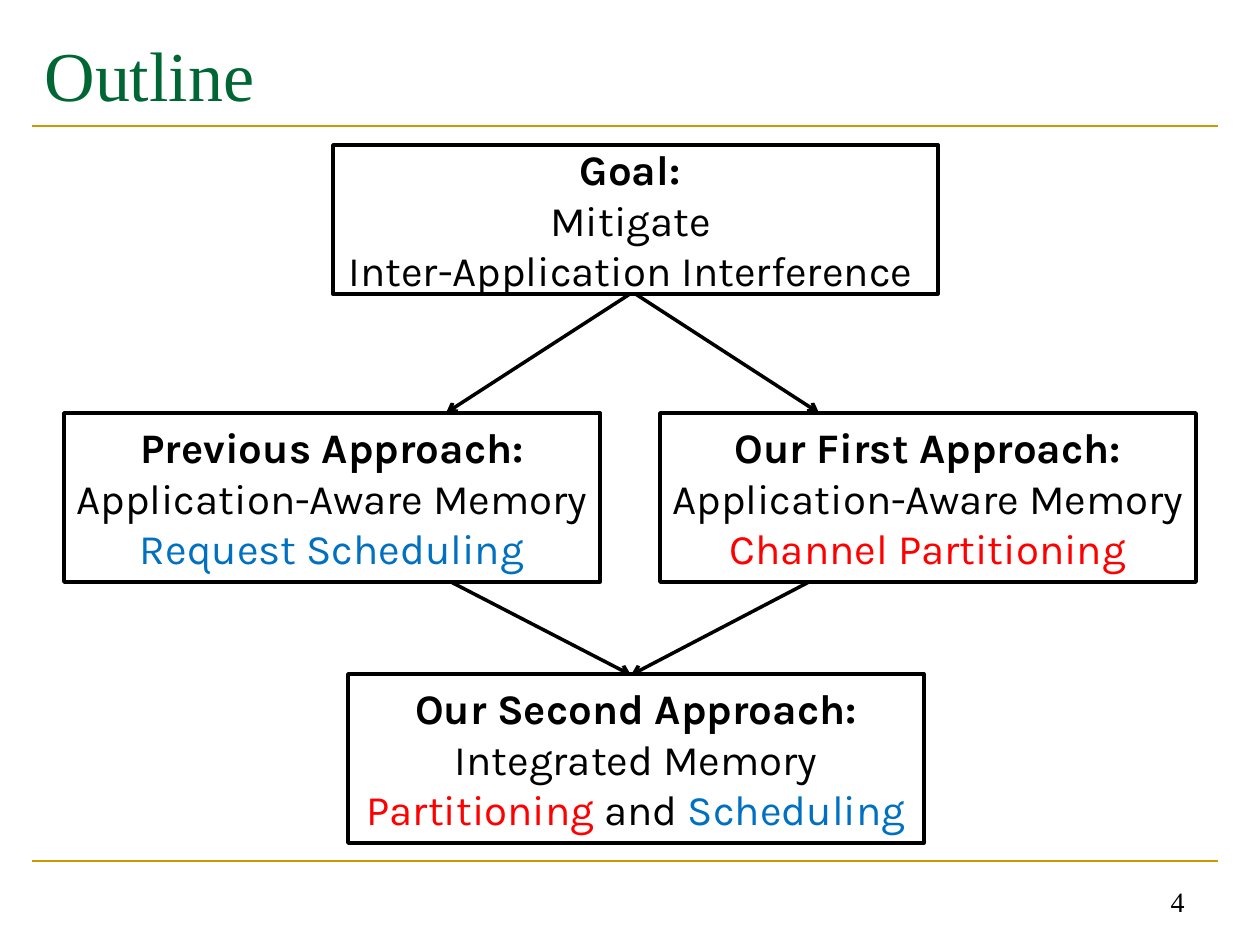
import pptx
import pptx.dml.color
import pptx.enum.shapes
import pptx.enum.text
import pptx.oxml.ns
import pptx.util
from lxml import etree

PX = 914400 / 126  # EMU in one px
COLOURS = {
    "black": "000000",
    "green": "006633",
    "gold": "CC9900",
    "blue": "0070C0",
    "red": "FF0000",
}
ALIGN = pptx.enum.text.PP_ALIGN
ANCHOR = pptx.enum.text.MSO_ANCHOR


def px(length):
    return pptx.util.Emu(round(length * PX))


def rgb(colour):
    return pptx.dml.color.RGBColor.from_string(COLOURS[colour])


def add_run(paragraph, text, font="Karla", size=24, colour="black", bold=False):
    run = paragraph.add_run()
    run.text = text
    run.font.name = font
    run.font.size = pptx.util.Pt(size)
    run.font.bold = bold
    run.font.color.rgb = rgb(colour)


class Deck:
    serif = "Times New Roman"
    box_line = 2
    rule_line = 1.5

    def __init__(self, width, height):
        self.presentation = pptx.Presentation()
        self.presentation.slide_width = px(width)
        self.presentation.slide_height = px(height)
        self.slide = self.presentation.slides.add_slide(
            self.presentation.slide_layouts[5])

    def title(self, text, left, top, width, height):
        shape = self.slide.shapes.title
        shape.left, shape.top = px(left), px(top)
        shape.width, shape.height = px(width), px(height)
        shape.text_frame.vertical_anchor = ANCHOR.MIDDLE
        paragraph = shape.text_frame.paragraphs[0]
        paragraph.alignment = ALIGN.LEFT
        add_run(paragraph, text, font=self.serif, size=40, colour="green")

    def label(self, text, left, top, width, height):
        shape = self.slide.shapes.add_textbox(
            px(left), px(top), px(width), px(height))
        shape.text_frame.word_wrap = True
        shape.text_frame.vertical_anchor = ANCHOR.BOTTOM
        paragraph = shape.text_frame.paragraphs[0]
        paragraph.alignment = ALIGN.RIGHT
        add_run(paragraph, text, font=self.serif, size=16)

    def line(self, start, end, colour="black", weight=box_line, arrow=False):
        connector = self.slide.shapes.add_connector(
            pptx.enum.shapes.MSO_CONNECTOR.STRAIGHT,
            *map(px, start), *map(px, end))
        connector.line.color.rgb = rgb(colour)
        connector.line.width = pptx.util.Pt(weight)
        if arrow:
            etree.SubElement(connector.line._get_or_add_ln(),
                             pptx.oxml.ns.qn("a:tailEnd"), type="arrow")
        etree.SubElement(connector._element.spPr,
                         pptx.oxml.ns.qn("a:effectLst"))
        return connector

    def rule(self, y):
        self.line((32, y), (1218, y), "gold", self.rule_line)

    def box(self, left, top, width, height, paragraphs):
        """Each paragraph is a list of (text, format) runs."""
        shape = self.slide.shapes.add_shape(
            pptx.enum.shapes.MSO_SHAPE.RECTANGLE,
            px(left), px(top), px(width), px(height))
        shape.shadow.inherit = False
        shape.fill.background()
        shape.line.color.rgb = rgb("black")
        shape.line.width = pptx.util.Pt(self.box_line)
        frame = shape.text_frame
        frame.word_wrap = True
        frame.vertical_anchor = ANCHOR.MIDDLE
        for index, runs in enumerate(paragraphs):
            paragraph = frame.add_paragraph() if index else frame.paragraphs[0]
            paragraph.alignment = ALIGN.CENTER
            for text, style in runs:
                add_run(paragraph, text, **style)
        return shape


PLAIN, BOLD = {}, {"bold": True}
BLUE, RED = {"colour": "blue"}, {"colour": "red"}


def main():
    deck = Deck(1260, 945)

    # Frame of the slide
    deck.rule(861)
    deck.rule(126)
    deck.title("Outline", 32, 21, 1186, 105)
    deck.label("4", 903, 861, 294, 63)

    # Goal and the arrows leaving it
    goal = deck.box(333, 145, 605, 149, [
        [("Goal: ", BOLD)],
        [("Mitigate ", PLAIN)],
        [("Inter-Application Interference ", PLAIN)],
    ])
    deck.line((630, 294), (446, 413), arrow=True)
    to_first = deck.line((635, 294), (819, 413), arrow=True)
    to_first.begin_connect(goal, 2)

    # The two separate approaches
    for left, heading, method, style in (
            (64, "Previous Approach:", "Request Scheduling", BLUE),
            (660, "Our First Approach:", "Channel Partitioning", RED)):
        deck.box(left, 413, 536, 169, [
            [(heading, BOLD)],
            [("Application-Aware Memory ", PLAIN), (method, style)],
        ])

    # The approach that joins both
    for start in (451, 809):
        deck.line((start, 582), (631, 675), arrow=True)
    deck.box(348, 674, 576, 169, [[
        ("Our Second Approach:", BOLD),
        (" Integrated Memory ", PLAIN),
        ("Partitioning", RED),
        (" and ", PLAIN),
        ("Scheduling", BLUE),
    ]])

    deck.presentation.save("out.pptx")


if __name__ == "__main__":
    main()
